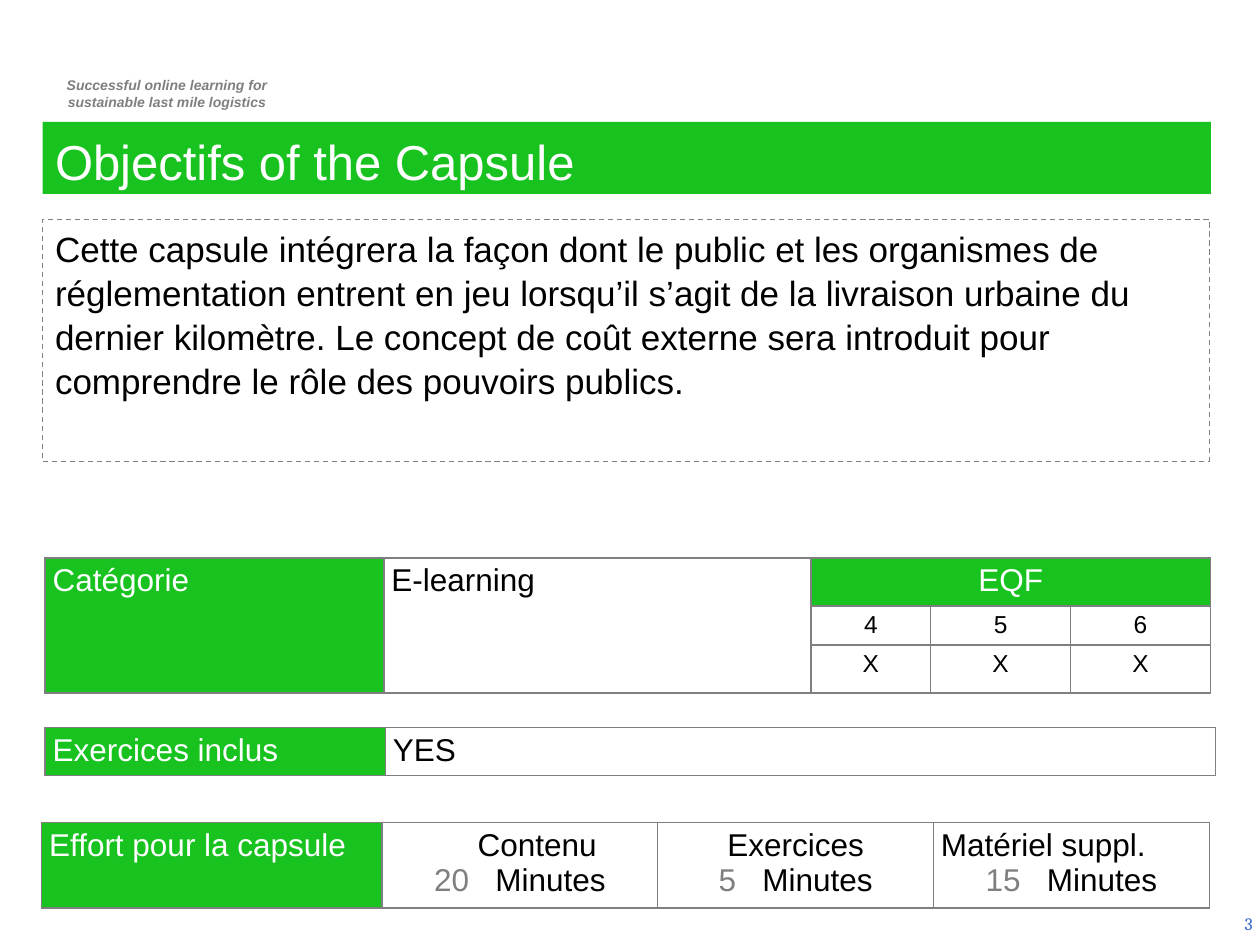
from lxml import etree
from pptx import Presentation
from pptx.dml.color import RGBColor
from pptx.enum.dml import MSO_LINE
from pptx.enum.shapes import MSO_SHAPE
from pptx.enum.text import MSO_ANCHOR, PP_ALIGN
from pptx.oxml.ns import qn
from pptx.util import Cm, Pt

GREEN = RGBColor(0x18, 0xC3, 0x20)
GRAY = RGBColor(0x7F, 0x7F, 0x7F)
BLUE = RGBColor(0x33, 0x66, 0xCC)
WHITE = RGBColor(0xFF, 0xFF, 0xFF)
BLACK = RGBColor(0, 0, 0)

LEFT, CENTER, RIGHT, JUSTIFY = PP_ALIGN.LEFT, PP_ALIGN.CENTER, PP_ALIGN.RIGHT, PP_ALIGN.JUSTIFY
TOP, MIDDLE = MSO_ANCHOR.TOP, MSO_ANCHOR.MIDDLE
RECTANGLE = MSO_SHAPE.RECTANGLE
DASH = MSO_LINE.DASH

BODY = (
    "Cette capsule intégrera la façon dont le public et les organismes de "
    "réglementation entrent en jeu lorsqu’il s’agit de la livraison urbaine du "
    "dernier kilomètre. Le concept de coût externe sera introduit pour "
    "comprendre le rôle des pouvoirs publics."
)
EFFORTS = [
    ("Contenu", "20", CENTER, 0.7),
    ("Exercices", "5", CENTER, 0),
    ("Matériel suppl.", "15", LEFT, 0),
]


def add_run(paragraph, text, size=18, color=BLACK, font="Arial", bold=False, italic=False, spacing=0):
    """Append a run; spacing is extra letter spacing in points."""
    run = paragraph.add_run()
    run.text = text
    run.font.size = Pt(size)
    run.font.name = font
    run.font.bold = bold
    run.font.italic = italic
    run.font.color.rgb = color
    if spacing:
        run.font._element.set("spc", str(spacing * 100))


def write(frame, text, align=LEFT, anchor=TOP, line_spacing=None, indent=0, **run_format):
    """Fill a text frame with one paragraph per line of text."""
    frame.word_wrap = True
    frame.vertical_anchor = anchor
    for index, line in enumerate(text.split("\n")):
        paragraph = frame.add_paragraph() if index else frame.paragraphs[0]
        paragraph.alignment = align
        if line_spacing:
            paragraph.line_spacing = line_spacing
        if indent:
            paragraph._p.get_or_add_pPr().set("marL", str(Cm(indent)))
        add_run(paragraph, line, **run_format)


def add_text(slide, left, top, width, height, text, **text_format):
    box = slide.shapes.add_textbox(Cm(left), Cm(top), Cm(width), Cm(height))
    write(box.text_frame, text, **text_format)


def add_panel(slide, left, top, width, height, text, fill=None, **text_format):
    """Add a filled rectangle, or a dashed one when there is no fill."""
    panel = slide.shapes.add_shape(RECTANGLE, Cm(left), Cm(top), Cm(width), Cm(height))
    panel.shadow.inherit = False
    if fill is None:
        panel.fill.background()
        panel.line.color.rgb = GRAY
        panel.line.width = Pt(0.75)
        panel.line.dash_style = DASH
    else:
        panel.fill.solid()
        panel.fill.fore_color.rgb = fill
        panel.line.fill.background()
    write(panel.text_frame, text, **text_format)


def set_borders(cell):
    properties = cell._tc.get_or_add_tcPr()
    for position, side in enumerate(("a:lnL", "a:lnR", "a:lnT", "a:lnB")):
        line = etree.Element(qn(side), w=str(Pt(1)))
        fill = etree.SubElement(line, qn("a:solidFill"))
        etree.SubElement(fill, qn("a:srgbClr"), val=str(GRAY))
        properties.insert(position, line)


def add_grid(slide, left, top, columns, rows):
    """Add an unfilled table with grey borders."""
    table = slide.shapes.add_table(
        len(rows), len(columns), Cm(left), Cm(top), Cm(sum(columns)), Cm(sum(rows))
    ).table
    table.first_row = table.horz_banding = False
    for column, width in zip(table.columns, columns):
        column.width = Cm(width)
    for row, height in zip(table.rows, rows):
        row.height = Cm(height)
    for cell in table.iter_cells():
        cell.margin_left = cell.margin_right = Cm(0.15)
        cell.margin_top = cell.margin_bottom = Cm(0.1)
        cell.fill.background()
        set_borders(cell)
    return table


def write_header(cell, text, align=JUSTIFY):
    cell.fill.solid()
    cell.fill.fore_color.rgb = GREEN
    write(cell.text_frame, text, align=align, color=WHITE)


def add_category_table(slide):
    table = add_grid(slide, 0.91, 11.25, [6.83, 8.61, 2.41, 2.82, 2.82], [0.94, 0.79, 0.94])
    for column in (0, 1):
        table.cell(0, column).merge(table.cell(2, column))
    table.cell(0, 2).merge(table.cell(0, 4))
    write_header(table.cell(0, 0), "Catégorie")
    write(table.cell(0, 1).text_frame, "E-learning", align=JUSTIFY)
    write_header(table.cell(0, 2), "EQF", align=CENTER)
    for column, level in enumerate("456", start=2):
        for row, text in ((1, level), (2, "X")):
            write(table.cell(row, column).text_frame, text, align=CENTER, size=14)


def add_exercise_table(slide):
    table = add_grid(slide, 0.91, 14.67, [6.86, 16.73], [0.94])
    write_header(table.cell(0, 0), "Exercices inclus")
    write(table.cell(0, 1).text_frame, "YES", align=JUSTIFY)


def add_effort_table(slide):
    table = add_grid(slide, 0.84, 16.58, [6.86] + [5.56] * 3, [1.71])
    write_header(table.cell(0, 0), "Effort pour la capsule")
    for column, (label, minutes, align, indent) in enumerate(EFFORTS, start=1):
        frame = table.cell(0, column).text_frame
        write(frame, label, align=align, indent=indent)
        duration = frame.add_paragraph()
        duration.alignment = CENTER
        add_run(duration, minutes, color=GRAY)
        add_run(duration, " ", color=GRAY, spacing=10)
        add_run(duration, "Minutes")


def main():
    presentation = Presentation()
    presentation.slide_width = Cm(25.4)
    presentation.slide_height = Cm(19.05)
    slide = presentation.slides.add_slide(presentation.slide_layouts[6])

    add_text(slide, 0.74, 1.42, 5.16, 0.94,
             "Successful online learning for\nsustainable last mile logistics",
             align=CENTER, indent=0.1, size=8, color=GRAY, bold=True, italic=True)
    add_text(slide, 19.58, 18.11, 5.92, 1.02, "3",
             align=RIGHT, anchor=MIDDLE, size=10, color=BLUE, font="Cambria")
    add_panel(slide, 0.86, 2.46, 23.55, 1.45, "Objectifs of the Capsule",
              fill=GREEN, line_spacing=1.05, size=28, color=WHITE)
    add_panel(slide, 0.86, 4.42, 23.52, 4.88, BODY, line_spacing=1.05, size=20)
    add_category_table(slide)
    add_exercise_table(slide)
    add_effort_table(slide)

    presentation.save("out.pptx")


if __name__ == "__main__":
    main()
